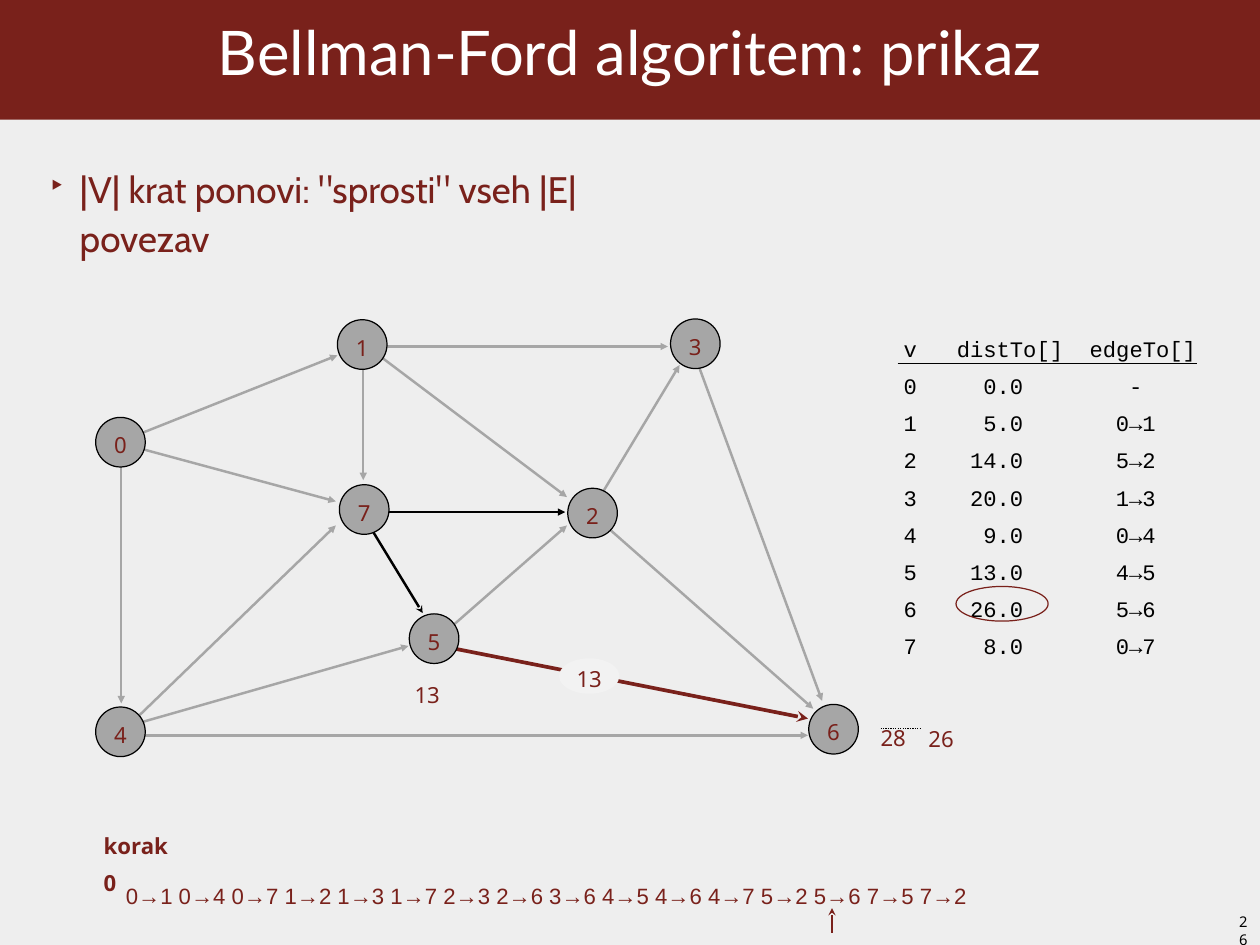
from lxml.etree import SubElement
from pptx import Presentation
from pptx.dml.color import RGBColor
from pptx.enum.dml import MSO_LINE
from pptx.enum.shapes import MSO_CONNECTOR, MSO_SHAPE
from pptx.enum.text import MSO_ANCHOR as Anchor, PP_ALIGN as Align
from pptx.oxml.ns import qn
from pptx.util import Inches, Pt

WIDTH, HEIGHT = 14.22, 10.67
COLUMNS, ROWS = 64, 48
RED, GRAY, BLACK = "79211B", "A6A6A6", "000000"
NODE_SIZE = 2.52

NODE_CENTERS = {
    "0": (6.12, 22.46), "1": (18.4, 17.5), "2": (30.1, 26.06), "3": (35.32, 17.46),
    "4": (6.12, 37.17), "5": (22.05, 32.44), "6": (42.34, 37.04), "7": (18.5, 25.88),
}
EDGES = {
    "0→1": (6.39, 22.32, 17.14, 18.05),
    "0→4": (6.16, 23.18, 6.16, 35.73),
    "0→7": (6.26, 22.55, 17.06, 25.47),
    "1→2": (18.77, 17.69, 28.8, 25.25),
    "1→3": (18.36, 17.6, 33.93, 17.6),
    "1→7": (18.45, 17.46, 18.45, 24.39),
    "2→3": (29.79, 26.37, 34.52, 18.54),
    "2→6": (30.74, 26.69, 41.31, 36),
    "3→6": (35.24, 17.91, 41.76, 35.6),
    "4→5": (6.12, 36.99, 20.75, 32.81),
    "4→6": (6.12, 37.35, 41.04, 37.35),
    "4→7": (6.35, 37.04, 17.06, 26.69),
    "5→2": (22.23, 32.45, 28.8, 26.69),
    "5→6": (22.59, 32.85, 41.04, 36.5),
    "7→5": (18.23, 25.83, 21.47, 31.14),
    "7→2": (18.23, 26.01, 28.71, 26.01),
}
EDGE_STYLES = {
    "5→6": dict(color=RED, width=3, head="stealth"),
    "7→5": dict(color=BLACK, head="stealth"),
    "7→2": dict(color=BLACK),
}
DISTANCES = [
    ("v", "distTo[]", "edgeTo[]"),
    ("0", "0.0", "-"),
    ("1", "5.0", "0→1"),
    ("2", "14.0", "5→2"),
    ("3", "20.0", "1→3"),
    ("4", "9.0", "0→4"),
    ("5", "13.0", "4→5"),
    ("6", "26.0", "5→6"),
    ("7", "8.0", "0→7"),
]


def rgb(code):
    """Turn a hex string into a colour."""
    return RGBColor.from_string(code)


def across(columns):
    """Turn grid columns into a length."""
    return Inches(columns * WIDTH / COLUMNS)


def down(rows):
    """Turn grid rows into a length."""
    return Inches(rows * HEIGHT / ROWS)


def write(frame, text, font="Noto Sans", size=18, color=RED, bold=False,
          align=Align.LEFT, spacing=None, bullet=None):
    """Put one formatted paragraph into a text frame."""
    paragraph = frame.paragraphs[0]
    paragraph.alignment = align
    if spacing:
        paragraph.line_spacing = Pt(spacing)
    if bullet:
        properties = paragraph._p.get_or_add_pPr()
        properties.set("marL", str(Inches(0.42)))
        properties.set("indent", str(Inches(-0.35)))
        SubElement(properties, qn("a:buSzPct")).set("val", "75000")
        SubElement(properties, qn("a:buChar")).set("char", bullet)
    run = paragraph.add_run()
    run.text = text
    run.font.name, run.font.size, run.font.bold = font, Pt(size), bold
    run.font.color.rgb = rgb(color)


class Board:
    """Draw styled elements on one slide's grid."""

    def __init__(self, slide, background):
        """Keep the slide and paint its background."""
        self.shapes = slide.shapes
        slide.background.fill.solid()
        slide.background.fill.fore_color.rgb = rgb(background)

    def place(self, x, y, width, height):
        """Turn a grid box into lengths."""
        return across(x), down(y), across(width), down(height)

    def frame(self, owner, insets, anchor):
        """Prepare the text frame of a shape."""
        frame = owner.text_frame
        frame.word_wrap = True
        frame.vertical_anchor = anchor
        (frame.margin_left, frame.margin_top,
         frame.margin_right, frame.margin_bottom) = map(Inches, insets)
        return frame

    def text(self, box, text, insets=(0.06, 0, 0, 0), anchor=Anchor.TOP, **style):
        """Add a text box."""
        owner = self.shapes.add_textbox(*self.place(*box))
        write(self.frame(owner, insets, anchor), text, **style)

    def shape(self, kind, box, fill=None, line=None, text=None, **style):
        """Add a preset shape with optional centred text."""
        shape = self.shapes.add_shape(kind, *self.place(*box))
        shape.shadow.inherit = False
        if fill:
            shape.fill.solid()
            shape.fill.fore_color.rgb = rgb(fill)
        else:
            shape.fill.background()
        if line:
            shape.line.color.rgb = rgb(line)
            shape.line.width = Pt(1)
        else:
            shape.line.fill.background()
        if text:
            frame = self.frame(shape, (0, 0, 0, 0), Anchor.MIDDLE)
            write(frame, text, align=Align.CENTER, **style)

    def line(self, ends, color=GRAY, width=2, head=None, dash=None):
        """Add a line, with an arrowhead at its end if one is named."""
        x1, y1, x2, y2 = ends
        line = self.shapes.add_connector(
            MSO_CONNECTOR.STRAIGHT, across(x1), down(y1), across(x2), down(y2))
        line.line.color.rgb = rgb(color)
        line.line.width = Pt(width)
        if dash:
            line.line.dash_style = dash
        properties = line._element.spPr
        if head:
            SubElement(properties.find(qn("a:ln")), qn("a:tailEnd")).set("type", head)
        SubElement(properties, qn("a:effectLst"))

    def cell(self, cell, text, left=0, right=0, align=Align.LEFT):
        """Fill one clear, borderless table cell."""
        cell.margin_top = cell.margin_bottom = 0
        cell.margin_left, cell.margin_right = across(left), across(right)
        cell.vertical_anchor = Anchor.MIDDLE
        cell.fill.background()
        properties = cell._tc.get_or_add_tcPr()
        for position, side in enumerate(("lnL", "lnR", "lnT", "lnB")):
            border = SubElement(properties, qn(f"a:{side}"))
            SubElement(border, qn("a:noFill"))
            properties.insert(position, border)
        write(cell.text_frame, text, font="Courier New", color=BLACK, align=align)

    def table(self, x, y, widths, row_height, rows, header_styles, body_styles):
        """Add a table with one style per column for header and body."""
        box = self.place(x, y, sum(widths), row_height * len(rows))
        table = self.shapes.add_table(len(rows), len(widths), *box).table
        table.first_row = table.horz_banding = False
        for column, width in zip(table.columns, widths):
            column.width = across(width)
        for r, values in enumerate(rows):
            table.rows[r].height = down(row_height)
            styles = body_styles if r else header_styles
            for c, (value, style) in enumerate(zip(values, styles)):
                self.cell(table.cell(r, c), value, **style)


def main():
    """Build the slide and save it."""
    deck = Presentation()
    deck.slide_width, deck.slide_height = Inches(WIDTH), Inches(HEIGHT)
    board = Board(deck.slides.add_slide(deck.slide_layouts[6]), "EEEEEE")

    board.shape(MSO_SHAPE.RECTANGLE, (0, 0, COLUMNS, 6.08), fill=RED,
                text="Bellman-Ford algoritem: prikaz", font="Lato", size=50,
                color="FFFFFF", spacing=46)
    board.text((1.89, 8.42, 30.74, 4.59), '|V| krat ponovi: "sprosti" vseh |E| povezav',
               insets=(0.06, 0.06, 0.12, 0.06), anchor=Anchor.MIDDLE,
               font="Cabin", size=30, spacing=40, bullet="‣")
    board.text((62.5, 46.13, 1.5, 1.44), "26", insets=(0.1, 0.05, 0.1, 0.05),
               size=12, color=BLACK)

    for edge, ends in EDGES.items():
        board.line(ends, **{"head": "triangle", **EDGE_STYLES.get(edge, {})})
    for node, (x, y) in NODE_CENTERS.items():
        corner = x - NODE_SIZE / 2, y - NODE_SIZE / 2
        board.shape(MSO_SHAPE.OVAL, (*corner, NODE_SIZE, NODE_SIZE),
                    fill=GRAY, line=BLACK, text=node, spacing=26)
    board.shape(MSO_SHAPE.OVAL, (28.4, 33.44, 3.06, 1.8), fill="F2F2F2",
                text="13", spacing=26)
    for distance, x, y in (("13", 20.79, 34.07), ("28", 44.46, 36.27), ("26", 46.89, 36.32)):
        board.text((x, y, 2.3, 1.8), distance, spacing=30)
    board.line((44.73, 37, 46.8, 37), color=BLACK, width=1, dash=MSO_LINE.ROUND_DOT)

    board.table(45.9, 16.9, (2.7, 5.8, 6.58), 1.89, DISTANCES,
                header_styles=({}, {}, dict(left=0.95)),
                body_styles=({}, dict(right=2.43, align=Align.RIGHT),
                             dict(align=Align.CENTER)))
    board.line((45.59, 18.45, 60.8, 18.45), color=BLACK, width=1)
    board.shape(MSO_SHAPE.OVAL, (48.56, 29.79, 4.68, 1.76), line=RED)

    board.text((5, 41.76, 4.05, 3.8), "korak 0", bold=True, spacing=30)
    board.text((6.12, 44.15, 51.6, 1.8), " ".join(EDGES), font="Arial", spacing=32)
    board.line((42.26, 47.39, 42.26, 46.13), color=RED, head="stealth")
    deck.save("out.pptx")


if __name__ == "__main__":
    main()
